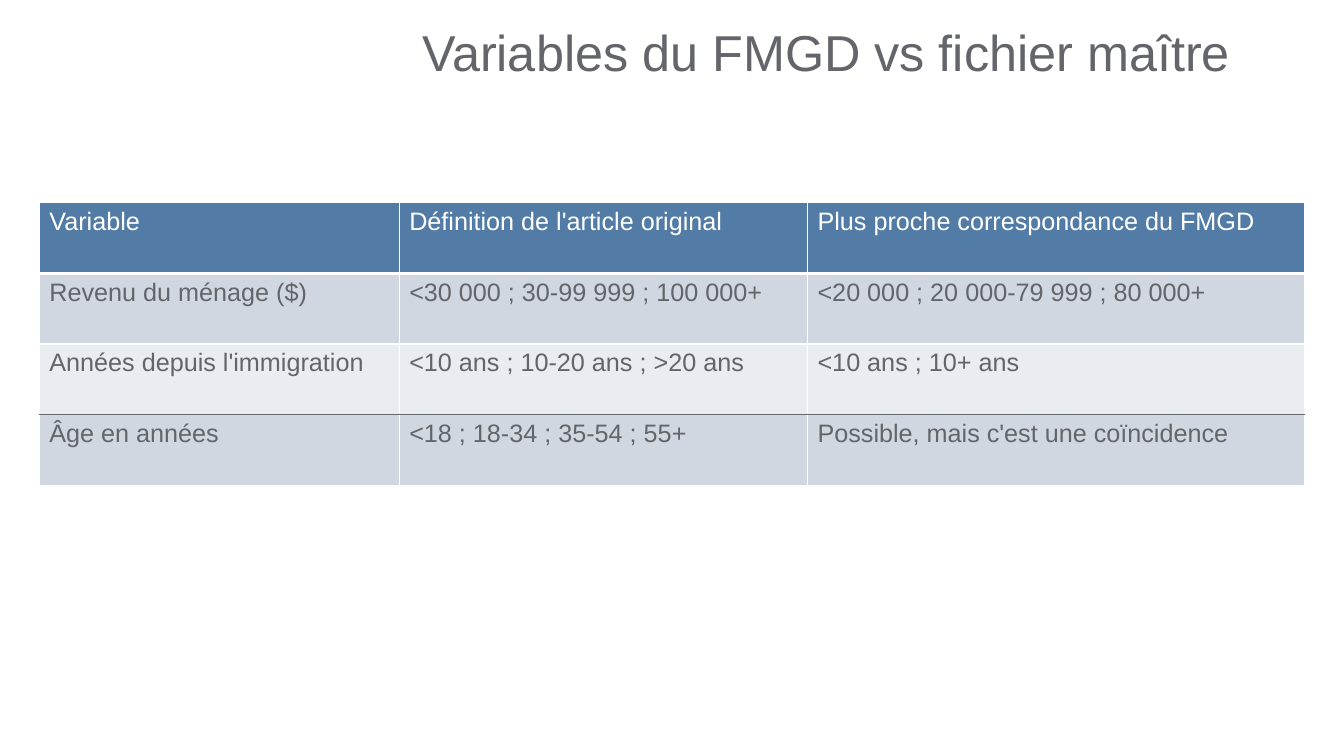
from dataclasses import dataclass

import pptx
import pptx.dml.color
import pptx.enum.text
import pptx.oxml
import pptx.oxml.ns
import pptx.util

Cm = pptx.util.Cm
Pt = pptx.util.Pt


@dataclass(frozen=True)
class Theme:
    font: str = "Arial"
    text: str = "63656A"
    white: str = "FFFFFF"
    header: str = "527CA6"
    bands: tuple = ("D1D7E1", "E9ECF1")
    title_size: int = 36
    table_size: int = 18
    thin: int = 1
    thick: int = 3


THEME = Theme()

TITLE = "Variables du FMGD vs fichier maître"
ROWS = (
    ("Variable", "Définition de l'article original", "Plus proche correspondance du FMGD"),
    ("Revenu du ménage ($)", "<30 000 ; 30-99 999 ; 100 000+", "<20 000 ; 20 000-79 999 ; 80 000+"),
    ("Années depuis l'immigration", "<10 ans ; 10-20 ans ; >20 ans", "<10 ans ; 10+ ans"),
    ("Âge en années", "<18 ; 18-34 ; 35-54 ; 55+", "Possible, mais c'est une coïncidence"),
)
COLUMN_WIDTHS = (9.07, 10.29, 12.52)
ROW_HEIGHT = 1.78
AGE_ROW = 3


def rgb(color):
    return pptx.dml.color.RGBColor.from_string(color)


def write_text(text_frame, text, size, color):
    text_frame.text = text
    font = text_frame.paragraphs[0].runs[0].font
    font.name = THEME.font
    font.size = Pt(size)
    font.color.rgb = rgb(color)


def add_title(slide, text):
    shape = slide.shapes.add_textbox(Cm(10.39), Cm(0.43), Cm(22.53), Cm(1.93))
    text_frame = shape.text_frame
    text_frame.word_wrap = True
    text_frame.vertical_anchor = pptx.enum.text.MSO_ANCHOR.MIDDLE
    write_text(text_frame, text, THEME.title_size, THEME.text)
    text_frame.paragraphs[0].line_spacing = 0.9


def set_border(cell, side, color, width):
    namespace = pptx.oxml.ns.nsdecls("a")
    line = pptx.oxml.parse_xml(
        f'<a:ln{side} {namespace} w="{Pt(width)}"><a:solidFill>'
        f'<a:srgbClr val="{color}"/></a:solidFill></a:ln{side}>'
    )
    cell._tc.get_or_add_tcPr().append(line)


def style_cell(cell, text, row_index):
    is_header = row_index == 0
    top = THEME.text if row_index == AGE_ROW else THEME.white
    bottom = THEME.text if row_index == AGE_ROW - 1 else THEME.white
    for side, color in (("L", THEME.white), ("R", THEME.white), ("T", top), ("B", bottom)):
        width = THEME.thick if is_header and side == "B" else THEME.thin
        set_border(cell, side, color, width)
    fill = THEME.header if is_header else THEME.bands[(row_index - 1) % 2]
    cell.fill.solid()
    cell.fill.fore_color.rgb = rgb(fill)
    write_text(cell.text_frame, text, THEME.table_size, THEME.white if is_header else THEME.text)


def add_variable_table(slide):
    shape = slide.shapes.add_table(
        len(ROWS), len(COLUMN_WIDTHS), Cm(0.99), Cm(5.11),
        Cm(sum(COLUMN_WIDTHS)), Cm(ROW_HEIGHT * len(ROWS)),
    )
    table = shape.table
    for column, width in zip(table.columns, COLUMN_WIDTHS):
        column.width = Cm(width)
    for row_index, texts in enumerate(ROWS):
        table.rows[row_index].height = Cm(ROW_HEIGHT)
        for column_index, text in enumerate(texts):
            style_cell(table.cell(row_index, column_index), text, row_index)


def main():
    presentation = pptx.Presentation()
    presentation.slide_width = Cm(33.87)
    presentation.slide_height = Cm(19.05)
    slide = presentation.slides.add_slide(presentation.slide_layouts[6])
    add_title(slide, TITLE)
    add_variable_table(slide)
    presentation.save("out.pptx")


if __name__ == "__main__":
    main()
